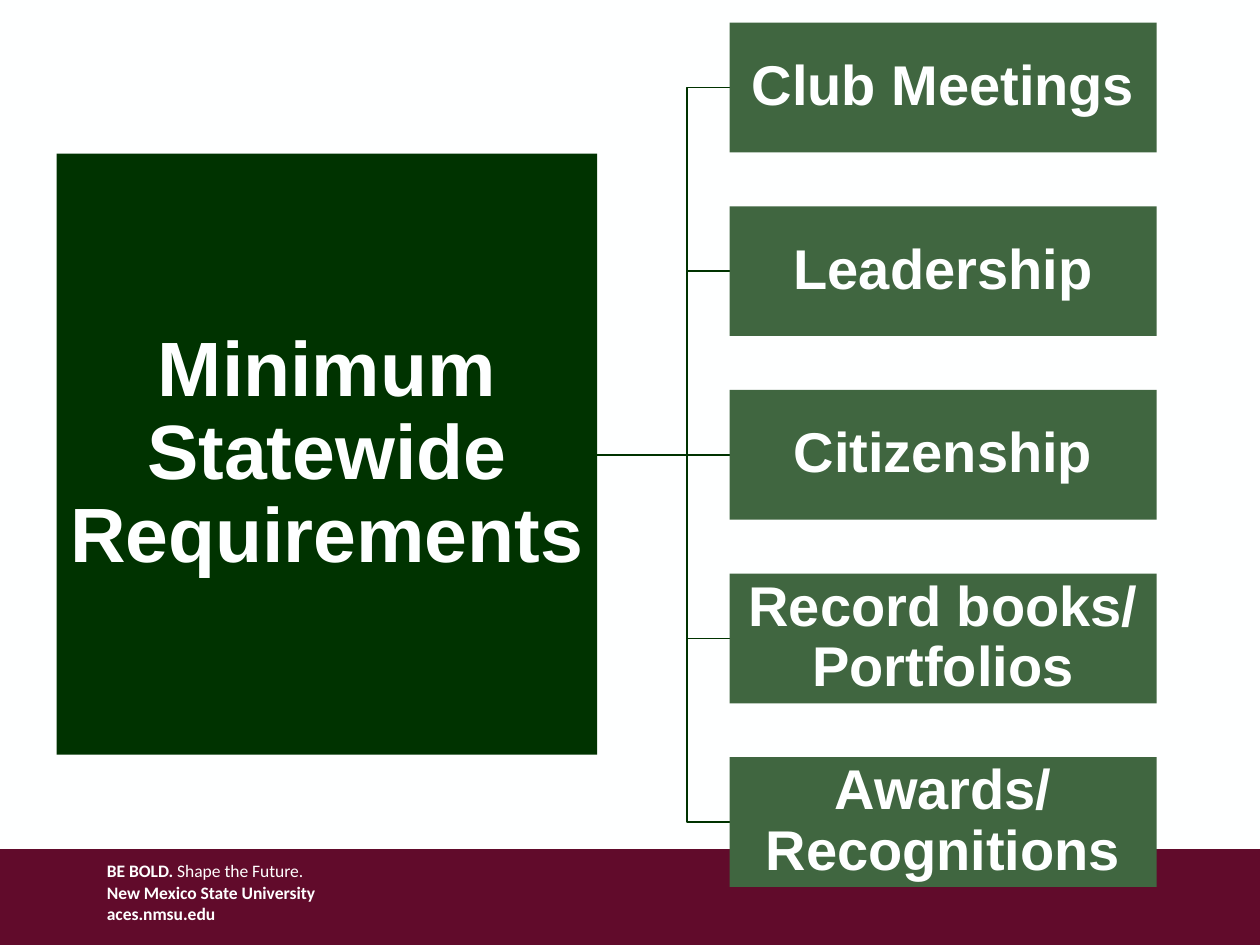
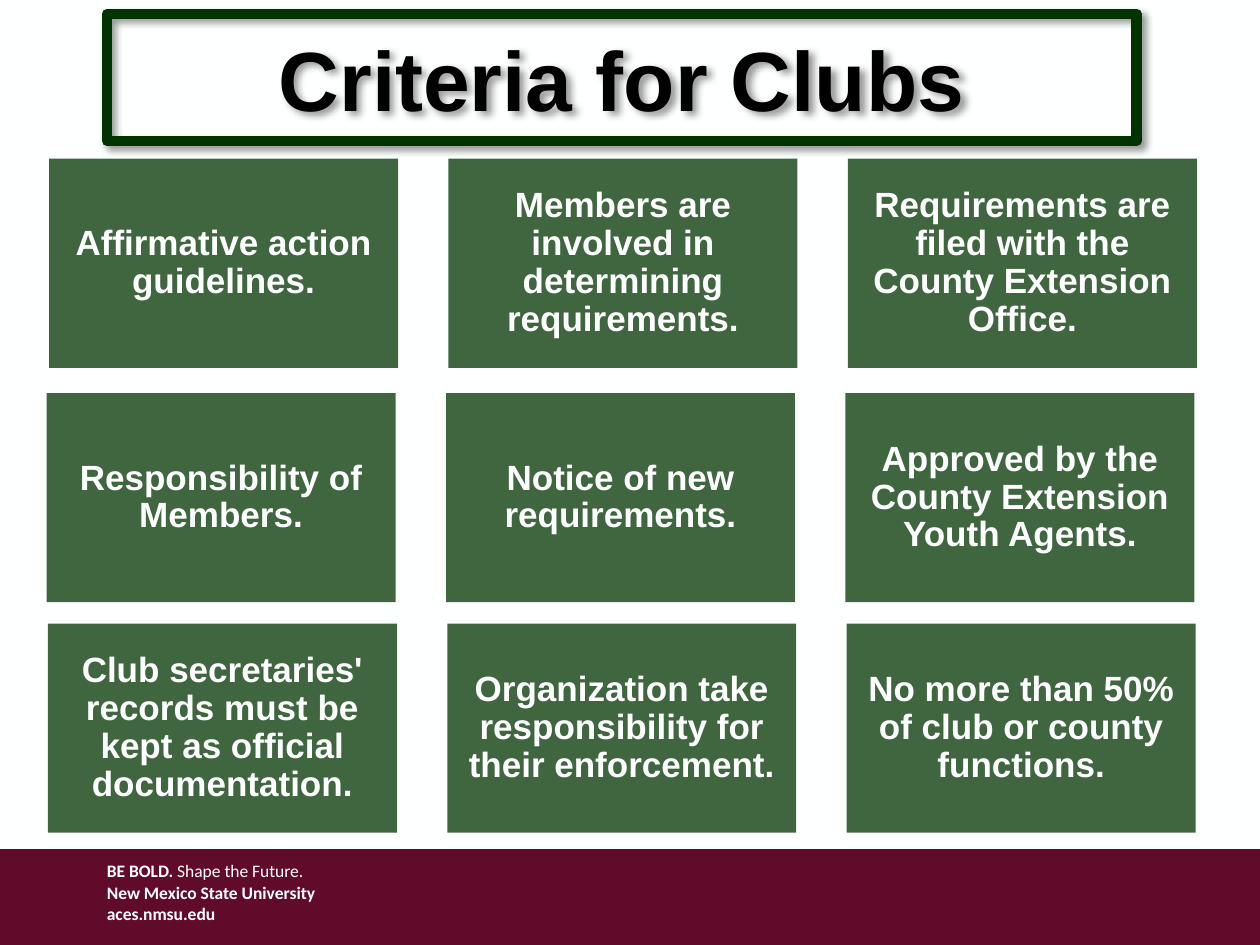
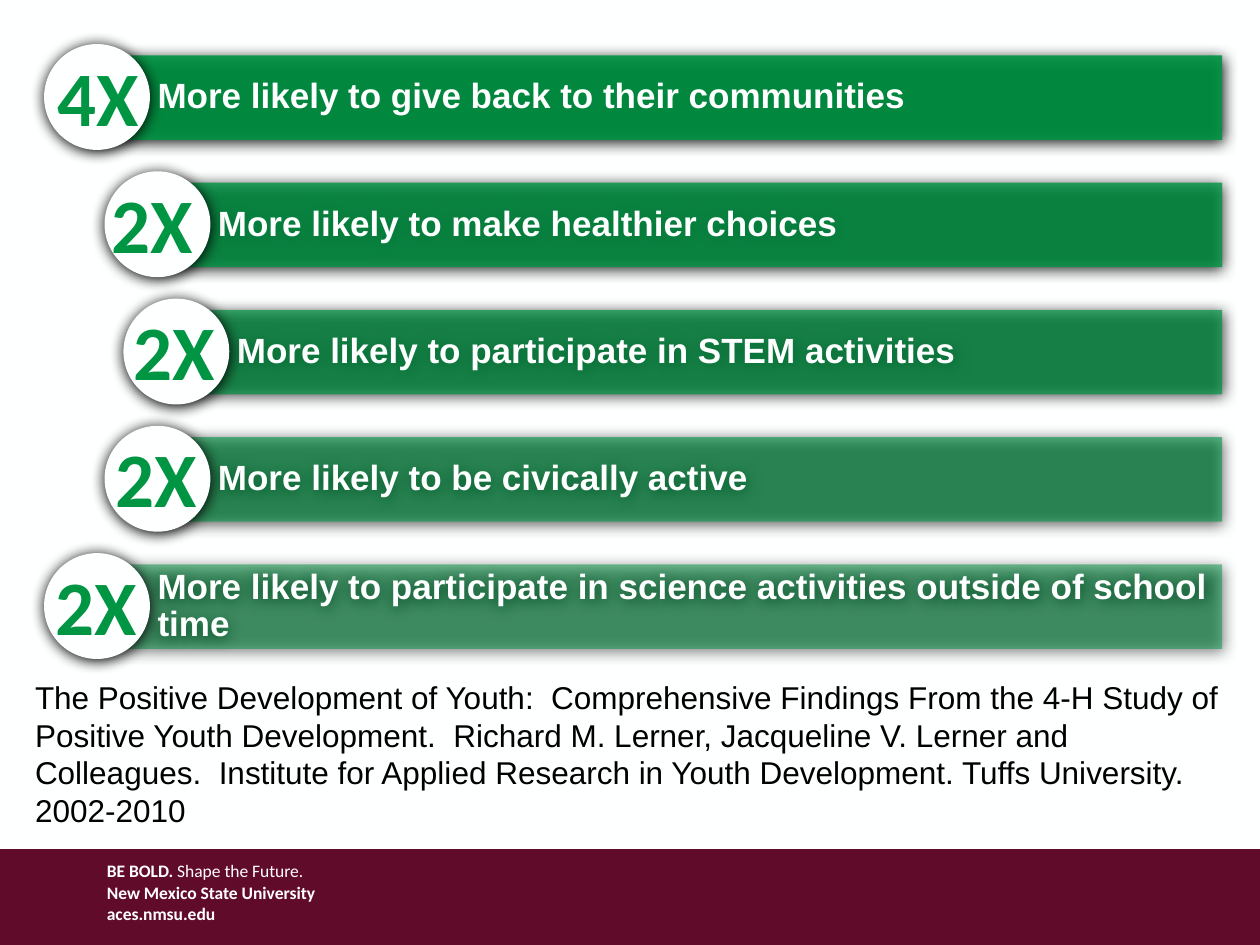
from typing import NamedTuple

from lxml.etree import SubElement
from pptx import Presentation
from pptx.dml.color import RGBColor
from pptx.enum.shapes import MSO_CONNECTOR, MSO_SHAPE
from pptx.enum.text import MSO_ANCHOR, MSO_AUTO_SIZE, PP_ALIGN
from pptx.oxml.ns import qn
from pptx.util import Inches, Pt

COLORS = {
    "paper": "FEFFFF",
    "white": "FFFFFF",
    "black": "000000",
    "band": "610B2B",
    "dark_green": "003300",
    "box_green": "406640",
    "bright_green": "009543",
}
WIDTH, HEIGHT = 10, 7.5
TITLE_ONLY, BLANK = 5, 6

REQUIREMENTS = [
    "Club Meetings",
    "Leadership",
    "Citizenship",
    "Record books/ Portfolios",
    "Awards/ Recognitions",
]
CRITERIA_ROWS = [
    (0.39, 1.26, [
        "Affirmative action guidelines.",
        "Members are involved in determining requirements.",
        "Requirements are filed with the County Extension Office.",
    ]),
    (0.37, 3.12, [
        "Responsibility of Members.",
        "Notice of new requirements.",
        "Approved by the County Extension Youth Agents.",
    ]),
    (0.38, 4.95, [
        "Club secretaries' records must be kept as official documentation.",
        "Organization take responsibility for their enforcement.",
        "No more than 50% of club or county functions.",
    ]),
]
OUTCOMES = [
    ("4X", 0, 0.01, "More likely to give back to their communities"),
    ("2X", 0.48, -0.04, "More likely to make healthier choices"),
    ("2X", 0.63, -0.02, "More likely to participate in STEM activities"),
    ("2X", 0.48, -0.01, "More likely to be civically active"),
    ("2X", 0, -0.01, "More likely to participate in science activities outside of school time"),
]
CITATION = (
    "The Positive Development of Youth:  Comprehensive Findings From the 4-H Study of "
    "Positive Youth Development.  Richard M. Lerner, Jacqueline V. Lerner and Colleagues. "
    " Institute for Applied Research in Youth Development. Tuffs University. 2002-2010"
)


class Box(NamedTuple):
    """Hold a rectangle in inches."""
    left: float
    top: float
    width: float
    height: float

    def lengths(self):
        """Return the four sides as slide lengths."""
        return [Inches(side) for side in self]


def color(name):
    """Return a named colour."""
    return RGBColor.from_string(COLORS[name])


def format_runs(paragraph, size, color_name, bold=True, font_name="Arial"):
    """Format every run of a paragraph."""
    for run in paragraph.runs:
        run.font.name = font_name
        run.font.size = Pt(size)
        run.font.bold = bold
        run.font.color.rgb = color(color_name)


def set_insets(text_frame, left, other):
    """Set the left inset and the three other insets of a text frame."""
    text_frame.margin_left = Inches(left)
    text_frame.margin_top = text_frame.margin_right = text_frame.margin_bottom = Inches(other)


def add_filled(slide, preset, box, fill):
    """Add a preset shape with a plain fill, no line and no shadow."""
    shape = slide.shapes.add_shape(preset, *box.lengths())
    shape.shadow.inherit = False
    shape.fill.solid()
    shape.fill.fore_color.rgb = color(fill)
    shape.line.fill.background()
    return shape


def add_panel(slide, box, fill, text, size, inset, left_inset=None, align=PP_ALIGN.CENTER):
    """Add a filled rectangle with bold white text."""
    shape = add_filled(slide, MSO_SHAPE.RECTANGLE, box, fill)
    text_frame = shape.text_frame
    text_frame.word_wrap = True
    text_frame.vertical_anchor = MSO_ANCHOR.MIDDLE
    set_insets(text_frame, inset if left_inset is None else left_inset, inset)
    text_frame.text = text
    paragraph = text_frame.paragraphs[0]
    paragraph.alignment = align
    paragraph.line_spacing = 0.9
    format_runs(paragraph, size, "paper")
    return shape


def add_text(slide, box, text):
    """Add a wrapping text box and return its text frame."""
    text_frame = slide.shapes.add_textbox(*box.lengths()).text_frame
    text_frame.word_wrap = True
    text_frame.text = text
    return text_frame


def add_shadow(shape, alpha, blur, distance, angle):
    """Give a shape an outer black shadow."""
    shape.shadow.inherit = False
    effects = shape._element.spPr.find(qn("a:effectLst"))
    shadow = SubElement(effects, qn("a:outerShdw"), blurRad=str(Pt(blur)), dist=str(Pt(distance)),
                        dir=str(angle * 60000), algn="ctr", rotWithShape="0")
    shade = SubElement(shadow, qn("a:srgbClr"), val=COLORS["black"])
    SubElement(shade, qn("a:alpha"), val=str(alpha * 1000))


def set_opacity(shape, percent):
    """Set the opacity of a solid fill."""
    shade = shape._element.spPr.find(qn("a:solidFill")).find(qn("a:srgbClr"))
    SubElement(shade, qn("a:alpha"), val=str(percent * 1000))


def add_footer(slide, box):
    """Add the band and the three university lines."""
    add_filled(slide, MSO_SHAPE.RECTANGLE, box, "band")
    lines = Box(box.left + 0.75, box.top + 0.04, 2.88, 0.82)
    text_frame = add_text(slide, lines, "BE BOLD. \nNew Mexico State University\naces.nmsu.edu")
    slogan = text_frame.paragraphs[0].add_run()
    slogan.text = "Shape the Future."
    for paragraph in text_frame.paragraphs:
        format_runs(paragraph, 10, "white", font_name="Calibri")
    slogan.font.bold = False


def add_slide(presentation, layout):
    """Add a slide with the shared footer."""
    slide = presentation.slides.add_slide(presentation.slide_layouts[layout])
    add_footer(slide, Box(0, 6.74, WIDTH, HEIGHT - 6.74))
    return slide


def add_branch(slide, start_x, start_y, end_x, end_y):
    """Join the root to one branch with a bent or straight line."""
    if start_y == end_y:
        line = slide.shapes.add_connector(
            MSO_CONNECTOR.STRAIGHT, *Box(start_x, start_y, end_x, end_y).lengths())
        SubElement(line._element.spPr, qn("a:effectLst"))
    else:
        bend_x = start_x + 0.71
        builder = slide.shapes.build_freeform(Inches(start_x), Inches(start_y))
        points = [(bend_x, start_y), (bend_x, end_y), (end_x, end_y)]
        builder.add_line_segments([(Inches(x), Inches(y)) for x, y in points], close=False)
        line = builder.convert_to_shape()
        line.shadow.inherit = False
        line.fill.background()
    line.line.color.rgb = color("dark_green")
    line.line.width = Pt(1)


def add_requirement_tree(slide, box):
    """Draw the root panel, its branches and their lines."""
    root = Box(box.left, box.top + 1.04, 4.29, 4.77)
    branch_width, branch_height = 3.39, 1.03
    branch_left = box.left + box.width - branch_width
    pitch = (box.height - branch_height) / (len(REQUIREMENTS) - 1)
    middle = len(REQUIREMENTS) // 2
    center_y = box.top + box.height / 2
    for index in range(len(REQUIREMENTS)):
        add_branch(slide, root.left + root.width, center_y, branch_left,
                   center_y + (index - middle) * pitch)
    add_panel(slide, root, "dark_green", "Minimum Statewide Requirements", 44, 0.03)
    for index, text in enumerate(REQUIREMENTS):
        branch = Box(branch_left, box.top + index * pitch, branch_width, branch_height)
        add_panel(slide, branch, "box_green", text, 32, 0.02)


def format_title(slide, box, text):
    """Turn the title placeholder into a rounded, outlined frame."""
    title = slide.shapes.title
    title.left, title.top, title.width, title.height = box.lengths()
    geometry = SubElement(title._element.spPr, qn("a:prstGeom"), prst="roundRect")
    SubElement(geometry, qn("a:avLst"))
    title.fill.background()
    title.line.color.rgb = color("dark_green")
    title.line.width = Pt(6)
    add_shadow(title, 40, 4, 3, 45)
    text_frame = title.text_frame
    text_frame.text = text
    text_frame.auto_size = MSO_AUTO_SIZE.NONE
    text_frame.vertical_anchor = MSO_ANCHOR.MIDDLE
    text_frame.paragraphs[0].alignment = PP_ALIGN.CENTER
    format_runs(text_frame.paragraphs[0], 48, "black")


def add_criteria_row(slide, box, texts):
    """Draw one row of criteria panels at equal gaps."""
    panel_width = 2.77
    pitch = (box.width - panel_width) / (len(texts) - 1)
    for index, text in enumerate(texts):
        panel = Box(box.left + index * pitch, box.top, panel_width, box.height)
        add_panel(slide, panel, "box_green", text, 20, 0.08)


def add_outcome(slide, box, opacity, factor, label_shift, text):
    """Draw one outcome bar with its round factor badge."""
    overhang = 0.37
    bar_box = Box(box.left + overhang, box.top + 0.09, box.width - overhang, 0.67)
    bar = add_panel(slide, bar_box, "bright_green", text, 20, 0.06, 0.53, PP_ALIGN.LEFT)
    set_opacity(bar, opacity)
    badge_box = Box(box.left, box.top, box.height, box.height)
    badge = add_filled(slide, MSO_SHAPE.OVAL, badge_box, "paper")
    for shape in (bar, badge):
        add_shadow(shape, 100, 8.5, 1, 90)
    label = add_text(slide, Box(box.left + label_shift, box.top - 0.01, 1, box.height), factor)
    format_runs(label.paragraphs[0], 44, "bright_green", font_name="Calibri")


def add_outcomes(slide, box):
    """Stack the outcome bars, each fainter than the one above."""
    badge_size = 0.84
    pitch = (box.height - badge_size) / (len(OUTCOMES) - 1)
    for index, (factor, indent, label_shift, text) in enumerate(OUTCOMES):
        row = Box(box.left + indent, box.top + index * pitch, box.width - indent, badge_size)
        add_outcome(slide, row, 90 - 10 * index, factor, label_shift, text)


def main():
    """Build the three slides."""
    presentation = Presentation()
    presentation.slide_width, presentation.slide_height = Inches(WIDTH), Inches(HEIGHT)
    background = presentation.slide_master.background.fill
    background.solid()
    background.fore_color.rgb = color("paper")

    add_requirement_tree(add_slide(presentation, BLANK), Box(0.45, 0.18, 8.73, 6.86))

    criteria = add_slide(presentation, TITLE_ONLY)
    format_title(criteria, Box(0.85, 0.11, 8.17, 1.01), "Criteria for Clubs")
    for left, top, texts in CRITERIA_ROWS:
        add_criteria_row(criteria, Box(left, top, 9.11, 1.66), texts)

    outcomes = add_slide(presentation, BLANK)
    add_outcomes(outcomes, Box(0.35, 0.35, 9.35, 4.88))
    citation = add_text(outcomes, Box(0.18, 5.33, 9.64, 1.31), CITATION)
    format_runs(citation.paragraphs[0], 18, "black", bold=False)

    presentation.save("out.pptx")


if __name__ == "__main__":
    main()
